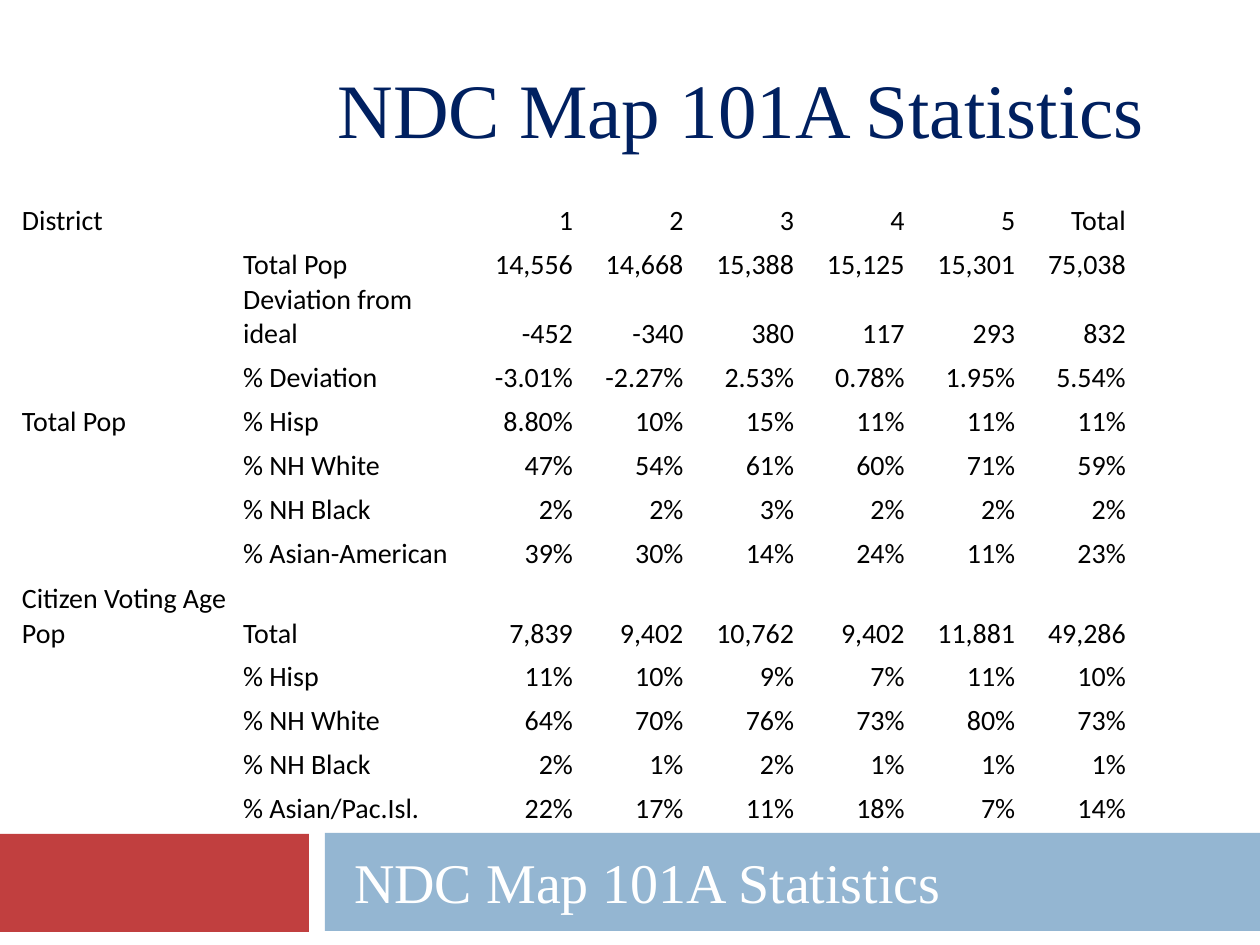
import pptx
import pptx.dml.color
import pptx.enum.shapes
import pptx.enum.text
import pptx.util

EMU_PER_PX = 914400 / 126
SERIF = "Times New Roman"
HEADING = "NDC Map 101A Statistics"
ANCHOR = pptx.enum.text.MSO_ANCHOR
ALIGN = pptx.enum.text.PP_ALIGN

LABEL_COLUMNS = (0, 2)
FIRST_VALUE_COLUMN = 4
COLUMN_COUNT = 10
LONGEST_UNMERGED_LABEL = 9
ROW_HEIGHT = 44
TALL_ROWS = {2: 69, 8: 80}

# Group, measure, then districts 1 to 5 and the total
STATISTICS = [
    ("District", "", "1 2 3 4 5 Total"),
    ("", "Total Pop", "14,556 14,668 15,388 15,125 15,301 75,038"),
    ("", "Deviation from ideal", "-452 -340 380 117 293 832"),
    ("", "% Deviation", "-3.01% -2.27% 2.53% 0.78% 1.95% 5.54%"),
    ("Total Pop", "% Hisp", "8.80% 10% 15% 11% 11% 11%"),
    ("", "% NH White", "47% 54% 61% 60% 71% 59%"),
    ("", "% NH Black", "2% 2% 3% 2% 2% 2%"),
    ("", "% Asian-American", "39% 30% 14% 24% 11% 23%"),
    ("Citizen Voting Age Pop", "Total", "7,839 9,402 10,762 9,402 11,881 49,286"),
    ("", "% Hisp", "11% 10% 9% 7% 11% 10%"),
    ("", "% NH White", "64% 70% 76% 73% 80% 73%"),
    ("", "% NH Black", "2% 1% 2% 1% 1% 1%"),
    ("", "% Asian/Pac.Isl.", "22% 17% 11% 18% 7% 14%"),
]


def px(length):
    return pptx.util.Emu(round(length * EMU_PER_PX))


def rgb(hex_colour):
    return pptx.dml.color.RGBColor.from_string(hex_colour)


def write(frame, text, font, size, colour, align=ALIGN.LEFT):
    """Fill a text frame with one formatted paragraph."""
    frame.text = text
    paragraph = frame.paragraphs[0]
    paragraph.alignment = align
    for run in paragraph.runs:
        run.font.name = font
        run.font.size = pptx.util.Pt(size)
        run.font.color.rgb = rgb(colour)


def add_band(slide, left, top, width, height, colour):
    band = slide.shapes.add_shape(
        pptx.enum.shapes.MSO_SHAPE.RECTANGLE, px(left), px(top), px(width), px(height))
    band.shadow.inherit = False
    band.fill.solid()
    band.fill.fore_color.rgb = rgb(colour)
    band.line.fill.background()


def place_title(slide):
    title = slide.shapes.title
    title.left, title.top, title.width, title.height = px(325), px(14), px(892), px(146)
    frame = title.text_frame
    frame.auto_size = pptx.enum.text.MSO_AUTO_SIZE.NONE
    frame.vertical_anchor = ANCHOR.BOTTOM
    write(frame, HEADING, SERIF, 44, "002060")


def add_subtitle(slide):
    subtitle = slide.shapes.add_textbox(px(325), px(834), px(924), px(95))
    frame = subtitle.text_frame
    frame.word_wrap = True
    frame.vertical_anchor = ANCHOR.MIDDLE
    frame.margin_left = px(29)
    write(frame, HEADING, SERIF, 32, "FFFFFF")


def clear_cell(cell):
    """Remove the fill and tighten the margins."""
    cell.fill.background()
    cell.vertical_anchor = ANCHOR.BOTTOM
    cell.margin_left = cell.margin_right = cell.margin_top = px(1)
    cell.margin_bottom = 0


def add_statistics(slide):
    heights = [TALL_ROWS.get(row, ROW_HEIGHT) for row in range(len(STATISTICS))]
    table = slide.shapes.add_table(
        len(STATISTICS), COLUMN_COUNT, px(21), px(194), px(1106), px(sum(heights))).table
    table.first_row = False
    table.horz_banding = False
    for row, height in zip(table.rows, heights):
        row.height = px(height)
    for cell in table.iter_cells():
        clear_cell(cell)

    for row, (group, measure, values) in enumerate(STATISTICS):
        for column, label in zip(LABEL_COLUMNS, (group, measure)):
            cell = table.cell(row, column)
            if len(label) > LONGEST_UNMERGED_LABEL:
                cell.merge(table.cell(row, column + 1))
            if label:
                write(cell.text_frame, label, "Calibri", 16, "000000")
        for column, value in enumerate(values.split(), FIRST_VALUE_COLUMN):
            write(table.cell(row, column).text_frame, value,
                  "Calibri", 16, "000000", ALIGN.RIGHT)


def main():
    presentation = pptx.Presentation()
    presentation.slide_width, presentation.slide_height = px(1260), px(945)
    slide = presentation.slides.add_slide(presentation.slide_layouts[5])
    add_band(slide, -1, 834, 310, 98, "C13F3F")
    add_band(slide, 325, 833, 935, 98, "94B6D2")
    place_title(slide)
    add_subtitle(slide)
    add_statistics(slide)
    presentation.save("out.pptx")


if __name__ == "__main__":
    main()
